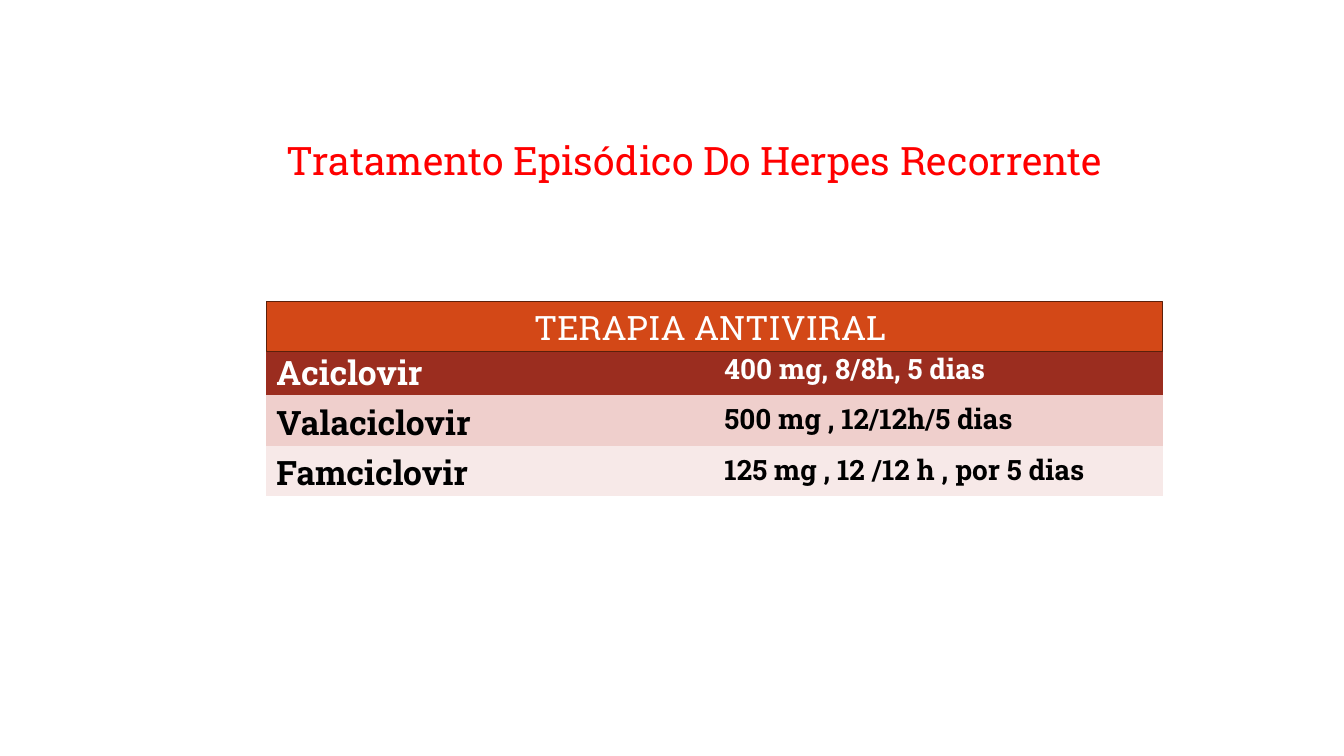
from pptx import Presentation
from pptx.dml.color import RGBColor
from pptx.enum import shapes, text
from pptx.oxml import ns
from pptx.util import Inches, Pt

FONT = "Roboto Slab"
COLORS = {
    "title": "FF0000", "white": "FFFFFF", "black": "000000",
    "banner": "D34817", "banner_line": "5C200A",
    "first_row": "9B2D1F", "second_row": "EFCFCC", "third_row": "F7E9E8",
}
NO_STYLE = "{2D5ABB26-0587-4C30-8999-92F81FD0307C}"
TREATMENTS = [
    ("Aciclovir", "400 mg, 8/8h, 5 dias", "first_row", "white"),
    ("Valaciclovir", "500 mg , 12/12h/5 dias", "second_row", "black"),
    ("Famciclovir", "125 mg , 12 /12 h , por 5 dias", "third_row", "black"),
]


def color(name):
    return RGBColor.from_string(COLORS[name])


def add_span(frame, words, size, color_name, bold=False, align=None):
    para = frame.paragraphs[0]
    para.alignment = align
    span = para.add_run()
    span.text = words
    span.font.name = FONT
    span.font.size = Pt(size)
    span.font.bold = bold
    span.font.color.rgb = color(color_name)


def add_title(page, left, top, width, height):
    box = page.shapes.add_textbox(*map(Inches, (left, top, width, height)))
    box.text_frame.word_wrap = True
    add_span(box.text_frame, "Tratamento Episódico Do Herpes Recorrente ",
             28, "title", align=text.PP_ALIGN.CENTER)


def add_treatments(page, left, top, width, height):
    frame = page.shapes.add_table(
        len(TREATMENTS), 2, *map(Inches, (left, top, width, height)))
    table = frame.table
    # Plain table style, without borders
    table._tbl.tblPr.find(ns.qn("a:tableStyleId")).text = NO_STYLE
    for row, (drug, dose, fill, ink) in enumerate(TREATMENTS):
        for column, (words, size) in enumerate([(drug, 24), (dose, 20)]):
            cell = table.cell(row, column)
            cell.fill.solid()
            cell.fill.fore_color.rgb = color(fill)
            add_span(cell.text_frame, words, size, ink, bold=True)


def add_banner(page, left, top, width, height):
    banner = page.shapes.add_shape(
        shapes.MSO_SHAPE.RECTANGLE, *map(Inches, (left, top, width, height)))
    banner.shadow.inherit = False
    banner.fill.solid()
    banner.fill.fore_color.rgb = color("banner")
    banner.line.color.rgb = color("banner_line")
    banner.line.width = Pt(1)
    banner.text_frame.vertical_anchor = text.MSO_ANCHOR.MIDDLE
    banner.text_frame.word_wrap = True
    add_span(banner.text_frame, "TERAPIA ANTIVIRAL ", 24, "white",
             align=text.PP_ALIGN.CENTER)


def main():
    deck = Presentation()
    deck.slide_width, deck.slide_height = Inches(13.33), Inches(7.5)
    page = deck.slides.add_slide(deck.slide_layouts[6])
    left, width = 2.64, 8.89
    add_title(page, left, 1.3, 8.59, 0.57)
    # The banner overlaps the top edge of the table
    add_treatments(page, left, 3.42, width, 1.5)
    add_banner(page, left, 2.99, width, 0.5)
    deck.save("out.pptx")


if __name__ == "__main__":
    main()
